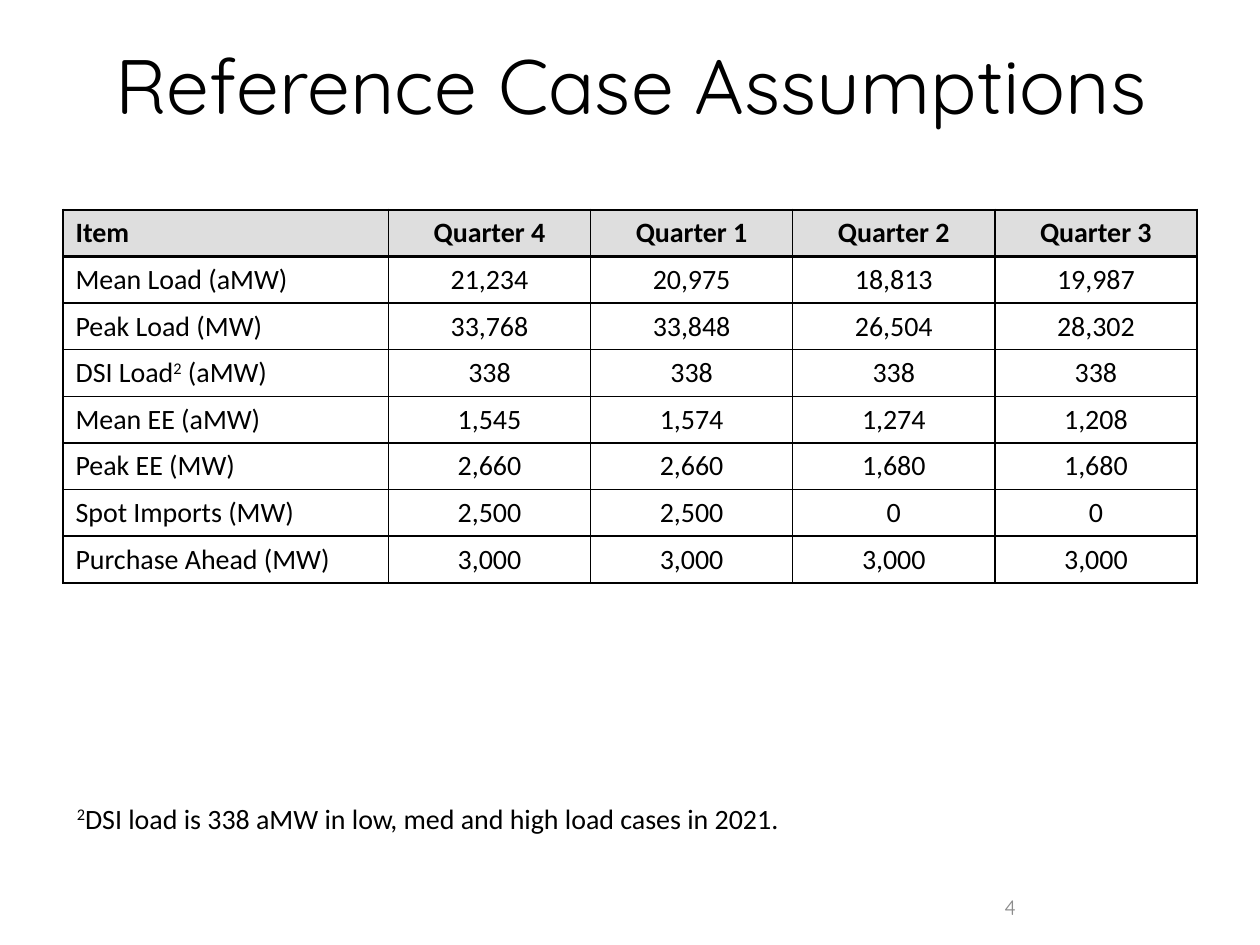
from dataclasses import dataclass

from lxml import etree
from pptx import Presentation
from pptx.dml.color import RGBColor
from pptx.enum.text import MSO_ANCHOR, PP_ALIGN
from pptx.oxml.ns import qn
from pptx.util import Cm, Pt

LEFT, MID, RIGHT = PP_ALIGN.LEFT, PP_ALIGN.CENTER, PP_ALIGN.RIGHT
TOP, CENTER = MSO_ANCHOR.TOP, MSO_ANCHOR.MIDDLE


@dataclass(frozen=True)
class Theme:
    """Hold the fonts, sizes, colours and line widths."""
    head: str = "Quicksand"
    body: str = "Calibri"
    big: int = 44
    text: int = 16
    small: int = 12
    ink: str = "000000"
    gray: str = "8C8C8C"
    band: str = "DEDEDE"
    thin: float = 1
    thick: float = 1.5


THEME = Theme()
ROWS = [
    ("Item", "Quarter 4", "Quarter 1", "Quarter 2", "Quarter 3"),
    ("Mean Load (aMW)", "21,234", "20,975", "18,813", "19,987"),
    ("Peak Load (MW)", "33,768", "33,848", "26,504", "28,302"),
    ("DSI Load^2^ (aMW)", "338", "338", "338", "338"),
    ("Mean EE (aMW)", "1,545", "1,574", "1,274", "1,208"),
    ("Peak EE (MW)", "2,660", "2,660", "1,680", "1,680"),
    ("Spot Imports (MW)", "2,500", "2,500", "0", "0"),
    ("Purchase Ahead (MW)", "3,000", "3,000", "3,000", "3,000"),
]


def write(frame, text, size, face=THEME.body, ink=THEME.ink, align=LEFT, bold=False):
    """Write one paragraph, raising the parts between carets."""
    para = frame.paragraphs[0]
    para.alignment = align
    for i, part in enumerate(text.split("^")):
        if not part:
            continue
        run = para.add_run()
        run.text = part
        font = run.font
        font.name, font.size, font.bold = face, Pt(size), bold
        font.color.rgb = RGBColor.from_string(ink)
        if i % 2:
            run._r.get_or_add_rPr().set("baseline", "30000")


def add_text(slide, box, text, size, anchor=TOP, **style):
    """Place a wrapped line of text in a box."""
    frame = slide.shapes.add_textbox(*map(Cm, box)).text_frame
    frame.word_wrap = True
    frame.vertical_anchor = anchor
    write(frame, text, size, **style)


def add_edges(cell, widths):
    """Draw the left, right, top and bottom edges of a cell."""
    props = cell._tc.get_or_add_tcPr()
    for i, (side, width) in enumerate(zip("LRTB", widths)):
        line = etree.Element(qn(f"a:ln{side}"), w=str(Pt(width)))
        fill = etree.SubElement(line, qn("a:solidFill"))
        etree.SubElement(fill, qn("a:srgbClr"), val=THEME.ink)
        props.insert(i, line)


def add_grid(slide, box, rows, first):
    """Place the load table, with equal columns after the first."""
    high, wide = len(rows), len(rows[0])
    table = slide.shapes.add_table(high, wide, *map(Cm, box)).table
    table.first_row = table.horz_banding = False
    for c, col in enumerate(table.columns):
        col.width = Cm(first if c == 0 else (box[2] - first) / (wide - 1))
    heavy = {0, 1, high - 1, high}
    for r, row in enumerate(rows):
        table.rows[r].height = Cm(box[3] / high)
        for c, text in enumerate(row):
            cell = table.cell(r, c)
            write(cell.text_frame, text, THEME.text,
                  align=MID if c else LEFT, bold=r == 0)
            if r == 0:
                cell.fill.solid()
                cell.fill.fore_color.rgb = RGBColor.from_string(THEME.band)
            else:
                cell.fill.background()
            marks = (c == 0, c == wide - 1, r in heavy, r + 1 in heavy)
            add_edges(cell, [THEME.thick if m else THEME.thin for m in marks])


def main():
    """Build the slide and save it."""
    deck = Presentation()
    deck.slide_width, deck.slide_height = Cm(25.4), Cm(19.05)
    slide = deck.slides.add_slide(deck.slide_layouts[6])
    add_text(slide, (1.3, 0.38, 22.86, 2.6), "Reference Case Assumptions",
             THEME.big, CENTER, face=THEME.head, align=MID)
    add_grid(slide, (1.27, 4.23, 22.86, 7.52), ROWS, 6.56)
    add_text(slide, (1.3, 16.03, 19.48, 0.94),
             "^2^DSI load is 338 aMW in low, med and high load cases in 2021.",
             THEME.text)
    add_text(slide, (14.8, 17.78, 5.93, 1.01), "4", THEME.small, CENTER,
             face=THEME.head, ink=THEME.gray, align=RIGHT)
    deck.save("out.pptx")


if __name__ == "__main__":
    main()
